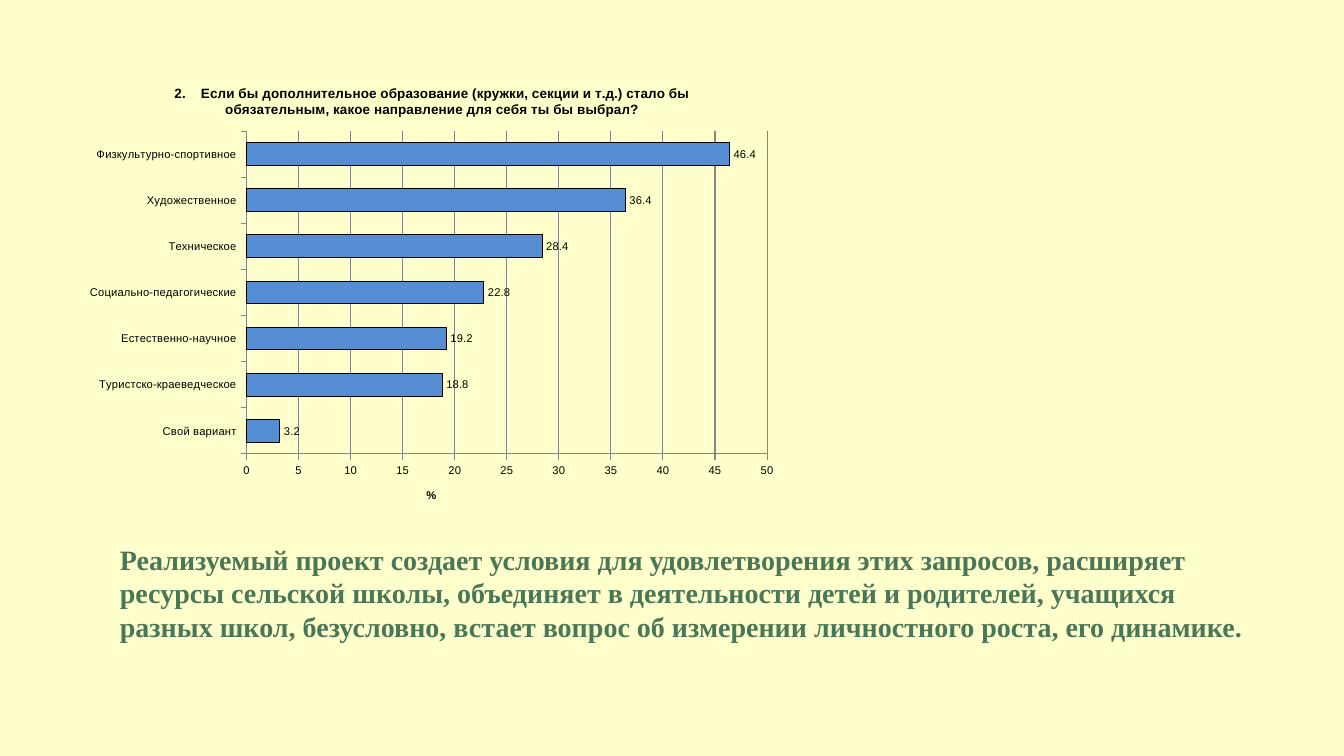
import pptx
import pptx.chart.data
import pptx.dml.color
import pptx.enum.chart
import pptx.enum.text
import pptx.oxml
import pptx.oxml.ns
import pptx.util

Inches = pptx.util.Inches
Pt = pptx.util.Pt

COLORS = {
    "background": "FFFFCC",
    "bar": "558ED5",
    "ink": "000000",
    "grid": "868686",
    "message": "497758",
}

QUESTION = (
    "2.    Если бы дополнительное образование (кружки, секции и т.д.) стало бы "
    "обязательным, какое направление для себя ты бы выбрал?"
)
DIRECTIONS = {
    "Свой вариант": 3.2,
    "Туристско-краеведческое": 18.8,
    "Естественно-научное": 19.2,
    "Социально-педагогические": 22.8,
    "Техническое": 28.4,
    "Художественное": 36.4,
    "Физкультурно-спортивное": 46.4,
}
MESSAGE = (
    "Реализуемый проект создает условия для удовлетворения этих запросов, "
    "расширяет ресурсы сельской школы, объединяет в деятельности детей и "
    "родителей, учащихся разных школ, безусловно, встает вопрос об измерении "
    "личностного роста, его динамике."
)


class SlideBuilder:
    def __init__(self, page, colors):
        self.page = page
        self.colors = colors

    def color(self, name):
        return pptx.dml.color.RGBColor.from_string(self.colors[name])

    def background(self, name):
        fill = self.page.background.fill
        fill.solid()
        fill.fore_color.rgb = self.color(name)

    def style(self, font, size, color, bold=False, face="Arial"):
        font.name = face
        font.size = Pt(size)
        font.bold = bold
        font.color.rgb = self.color(color)

    def outline(self, line, color):
        line.color.rgb = self.color(color)
        line.width = Pt(0.75)

    def add_span(self, frame, text, size, color, **options):
        span = frame.paragraphs[0].add_run()
        span.text = text
        self.style(span.font, size, color, **options)

    def text(self, left, top, width, height, text, size, color, **options):
        box = self.page.shapes.add_textbox(
            Inches(left), Inches(top), Inches(width), Inches(height))
        frame = box.text_frame
        frame.word_wrap = True
        frame.auto_size = pptx.enum.text.MSO_AUTO_SIZE.SHAPE_TO_FIT_TEXT
        self.add_span(frame, text, size, color, **options)

    def bar_chart(self, left, top, width, height, title, values, unit):
        data = pptx.chart.data.CategoryChartData(number_format="General")
        data.categories = list(values)
        data.add_series(title, list(values.values()))
        chart = self.page.shapes.add_chart(
            pptx.enum.chart.XL_CHART_TYPE.BAR_CLUSTERED,
            Inches(left), Inches(top), Inches(width), Inches(height), data).chart
        self.style(chart.font, 8, "ink")
        chart.has_legend = False
        chart.has_title = True
        chart.chart_title.include_in_layout = False
        self.add_span(chart.chart_title.text_frame, title, 9.6, "ink", bold=True)

        for axis in (chart.category_axis, chart.value_axis):
            axis.major_tick_mark = pptx.enum.chart.XL_TICK_MARK.OUTSIDE
            axis.minor_tick_mark = pptx.enum.chart.XL_TICK_MARK.NONE
            self.outline(axis.format.line, "grid")
        scale = chart.value_axis
        scale.minimum_scale, scale.maximum_scale, scale.major_unit = 0, 50, 5
        scale.has_major_gridlines = True
        self.outline(scale.major_gridlines.format.line, "grid")
        scale.has_title = True
        self.add_span(scale.axis_title.text_frame, unit, 8, "ink", bold=True)

        plot = chart.plots[0]
        plot.gap_width = 102
        plot.vary_by_categories = False
        bars = plot.series[0]
        bars.format.fill.solid()
        bars.format.fill.fore_color.rgb = self.color("bar")
        self.outline(bars.format.line, "ink")
        labels = bars.data_labels
        labels.show_value = True
        labels.position = pptx.enum.chart.XL_LABEL_POSITION.OUTSIDE_END
        self.style(labels.font, 8, "ink")
        self.place_plot(chart, x=0.24, y=0.14, w=0.73, h=0.71)

    def place_plot(self, chart, **fractions):
        modes = {"layoutTarget": "inner", "xMode": "edge", "yMode": "edge"}
        entries = "".join(
            f'<c:{tag} val="{value}"/>' for tag, value in {**modes, **fractions}.items())
        layout = pptx.oxml.parse_xml(
            f'<c:layout {pptx.oxml.ns.nsdecls("c")}>'
            f"<c:manualLayout>{entries}</c:manualLayout></c:layout>")
        area = chart.element.find(".//" + pptx.oxml.ns.qn("c:plotArea"))
        for old in area.findall(pptx.oxml.ns.qn("c:layout")):
            area.remove(old)
        area.insert(0, layout)


def main():
    deck = pptx.Presentation()
    deck.slide_width = Inches(13.33)
    deck.slide_height = Inches(7.5)
    page = deck.slides.add_slide(deck.slide_layouts[6])
    builder = SlideBuilder(page, COLORS)
    builder.background("background")
    builder.bar_chart(0.75, 0.67, 7.07, 4.51, QUESTION, DIRECTIONS, "%")
    builder.text(1.09, 5.33, 11.45, 1.11, MESSAGE, 20, "message",
                 bold=True, face="Times New Roman")
    deck.save("out.pptx")


if __name__ == "__main__":
    main()
